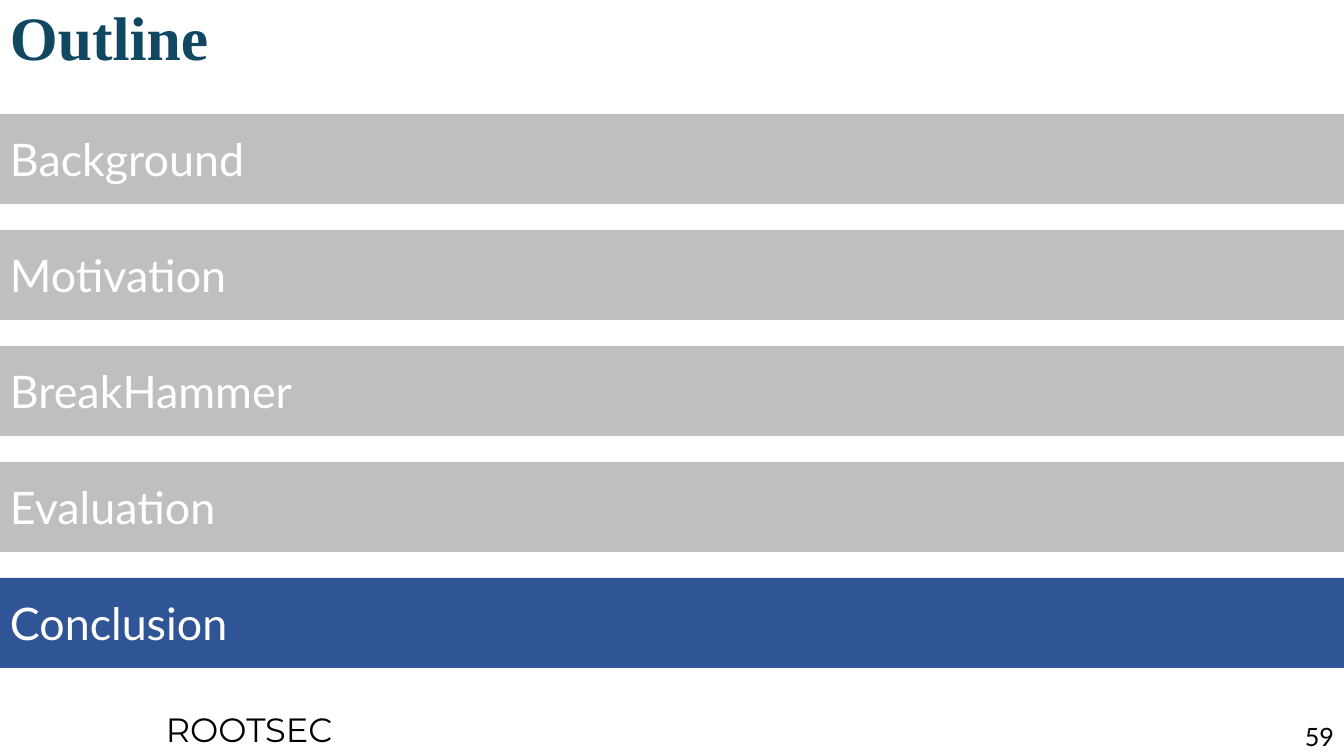
import pptx
import pptx.util
import pptx.dml.color
import pptx.enum.shapes
import pptx.enum.text

RGB = pptx.dml.color.RGBColor
GRAY = RGB(0xBF, 0xBF, 0xBF)
BLUE = RGB(0x2F, 0x55, 0x97)
TEAL = RGB(0x10, 0x48, 0x62)
WHITE = RGB(0xFF, 0xFF, 0xFF)
BLACK = RGB(0x00, 0x00, 0x00)

ALIGN = pptx.enum.text.PP_ALIGN
ANCHOR = pptx.enum.text.MSO_ANCHOR
WIDTH, HEIGHT = 1344, 756
TOPICS = ["Background", "Motivation", "BreakHammer", "Evaluation", "Conclusion"]
ACTIVE = "Conclusion"
TOP, PITCH, TALL = 114, 116, 90


def px(count):
    return pptx.util.Emu(round(count * 914400 / 100.8))


def write(shape, text, font, size, color, bold=False, align=ALIGN.LEFT,
          anchor=ANCHOR.MIDDLE, wrap=True):
    frame = shape.text_frame
    frame.text = text
    frame.word_wrap = wrap
    frame.vertical_anchor = anchor
    para = frame.paragraphs[0]
    para.alignment = align
    style = para.runs[0].font
    style.name = font
    style.size = pptx.util.Pt(size)
    style.bold = bold
    style.color.rgb = color
    return para


def label(slide, left, top, width, height, text, *style, **layout):
    box = slide.shapes.add_textbox(px(left), px(top), px(width), px(height))
    return write(box, text, *style, **layout)


def bar(slide, top, text, fill):
    rect = slide.shapes.add_shape(
        pptx.enum.shapes.MSO_SHAPE.RECTANGLE, 0, px(top), px(WIDTH), px(TALL))
    rect.shadow.inherit = False
    rect.fill.solid()
    rect.fill.fore_color.rgb = fill
    rect.line.fill.background()
    write(rect, text, "Lato", 32, WHITE)


def main():
    deck = pptx.Presentation()
    deck.slide_width = px(WIDTH)
    deck.slide_height = px(HEIGHT)
    slide = deck.slides.add_slide(deck.slide_layouts[6])

    title = label(slide, 0, 0, WIDTH, 81, "Outline",
                  "Times New Roman", 44, TEAL, bold=True)
    title.line_spacing = 0.9

    for row, topic in enumerate(TOPICS):
        bar(slide, TOP + row * PITCH, topic, BLUE if topic == ACTIVE else GRAY)

    label(slide, 156, 704, 193, 50, "ROOTSEC", "Montserrat", 24, BLACK,
          anchor=ANCHOR.TOP, wrap=False)
    label(slide, 1269, 716, 75, 40, "59", "Lato", 18, BLACK,
          align=ALIGN.RIGHT, anchor=ANCHOR.TOP)

    deck.save("out.pptx")


if __name__ == "__main__":
    main()
